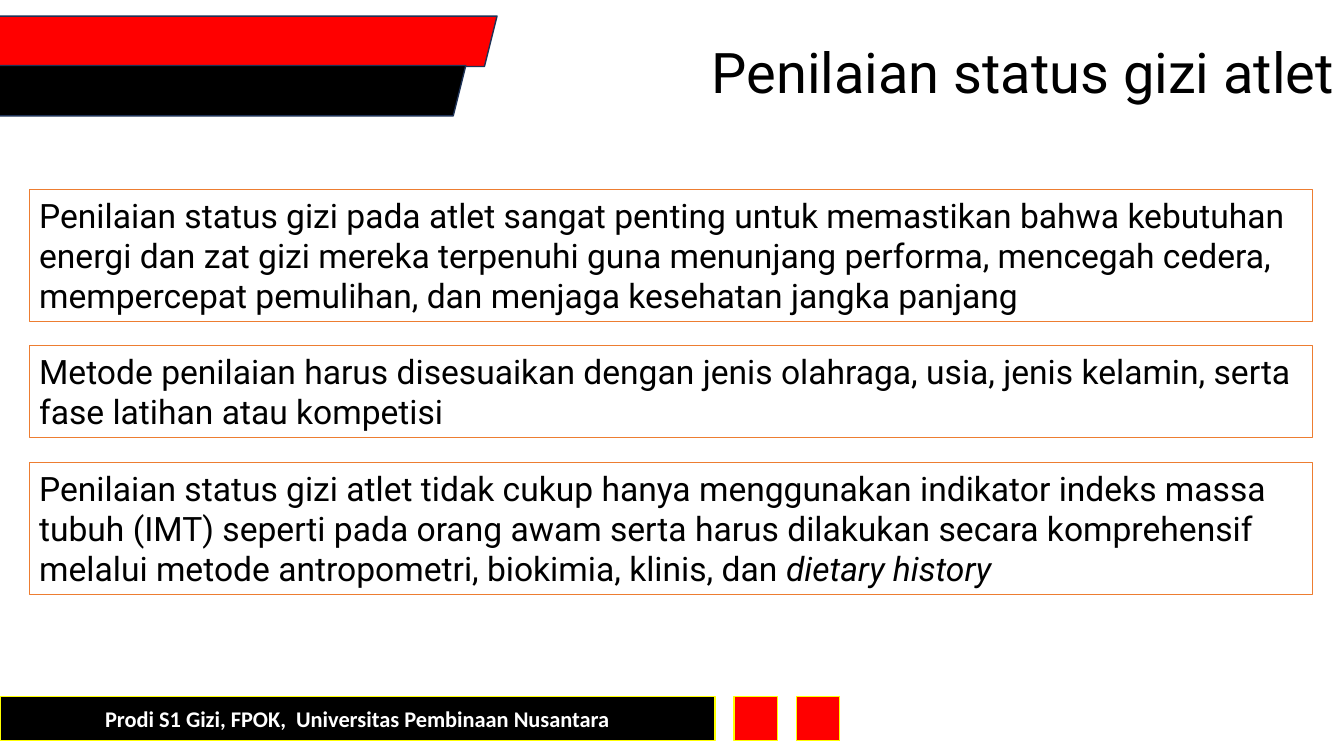
from pptx import Presentation
from pptx.dml.color import RGBColor
from pptx.enum.shapes import MSO_SHAPE
from pptx.enum.text import MSO_ANCHOR, PP_ALIGN
from pptx.util import Inches, Pt

BLACK = RGBColor(0x00, 0x00, 0x00)
WHITE = RGBColor(0xFF, 0xFF, 0xFF)
RED = RGBColor(0xFF, 0x00, 0x00)
YELLOW = RGBColor(0xFF, 0xFF, 0x00)
NAVY = RGBColor(0x1E, 0x32, 0x56)
ORANGE = RGBColor(0xED, 0x7D, 0x31)

BODY = {"name": "Roboto", "size": Pt(24), "color": BLACK}
TITLE = {**BODY, "size": Pt(40)}
FOOTER = {"name": "Calibri", "size": Pt(16), "bold": True, "color": WHITE}


def add_box(kind, left, top, width, height, fill, line):
    sp = s.shapes.add_shape(kind, Inches(left), Inches(top), Inches(width), Inches(height))
    sp.shadow.inherit = False
    sp.fill.solid()
    sp.fill.fore_color.rgb = fill
    sp.line.color.rgb = line
    sp.line.width = Pt(1)
    return sp


def add_run(p, text, fmt):
    r = p.add_run()
    r.text = text
    for key, value in fmt.items():
        if key == "color":
            r.font.color.rgb = value
        else:
            setattr(r.font, key, value)


prs = Presentation()
prs.slide_width, prs.slide_height = Inches(13.33), Inches(7.5)
s = prs.slides.add_slide(prs.slide_layouts[5])

title = s.shapes.title
title.left, title.top = Inches(4.53), Inches(0.02)
title.width, title.height = Inches(8.8), Inches(1.45)
tf = title.text_frame
tf.vertical_anchor = MSO_ANCHOR.MIDDLE
p = tf.paragraphs[0]
p.alignment = PP_ALIGN.RIGHT
p.line_spacing = 0.9
add_run(p, "Penilaian status gizi atlet", TITLE)

for left, top, fill in [(-0.39, 0.16, RED), (-0.7, 0.65, BLACK)]:
    add_box(MSO_SHAPE.PARALLELOGRAM, left, top, 5.32, 0.5, fill, NAVY)

footer = add_box(MSO_SHAPE.RECTANGLE, 0, 6.91, 7.09, 0.44, BLACK, YELLOW)
tf = footer.text_frame
tf.vertical_anchor = MSO_ANCHOR.MIDDLE
p = tf.paragraphs[0]
p.alignment = PP_ALIGN.CENTER
add_run(p, "Prodi S1 Gizi, FPOK,  Universitas Pembinaan Nusantara", FOOTER)

for i in range(2):
    add_box(MSO_SHAPE.RECTANGLE, 7.28 + 0.62 * i, 6.91, 0.43, 0.44, RED, YELLOW)

points = [
    (1.88, 1.31, "Penilaian status gizi pada atlet sangat penting untuk memastikan bahwa "
     "kebutuhan energi dan zat gizi mereka terpenuhi guna menunjang performa, mencegah "
     "cedera, mempercepat pemulihan, dan menjaga kesehatan jangka panjang", ""),
    (3.43, 0.91, "Metode penilaian harus disesuaikan dengan jenis olahraga, usia, jenis "
     "kelamin, serta fase latihan atau kompetisi", ""),
    (4.59, 1.31, "Penilaian status gizi atlet tidak cukup hanya menggunakan indikator indeks "
     "massa tubuh (IMT) seperti pada orang awam serta harus dilakukan secara komprehensif "
     "melalui metode antropometri, biokimia, klinis, dan ", "dietary history"),
]
for top, height, text, term in points:
    sp = add_box(MSO_SHAPE.RECTANGLE, 0.29, top, 12.73, height, WHITE, ORANGE)
    tf = sp.text_frame
    tf.word_wrap = True
    tf.vertical_anchor = MSO_ANCHOR.TOP
    p = tf.paragraphs[0]
    p.alignment = PP_ALIGN.LEFT
    add_run(p, text, BODY)
    if term:
        add_run(p, term, {**BODY, "italic": True})

prs.save("out.pptx")
